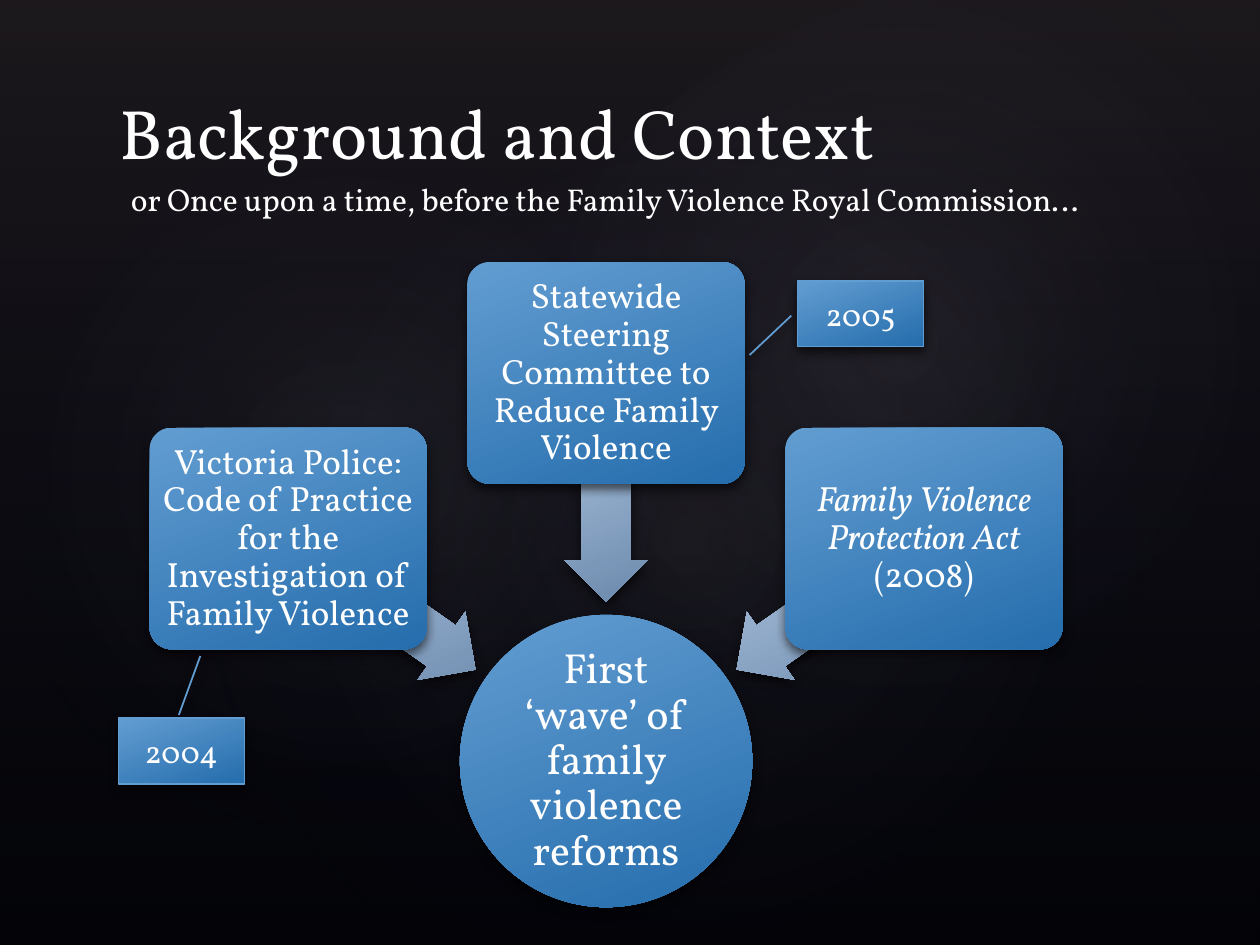
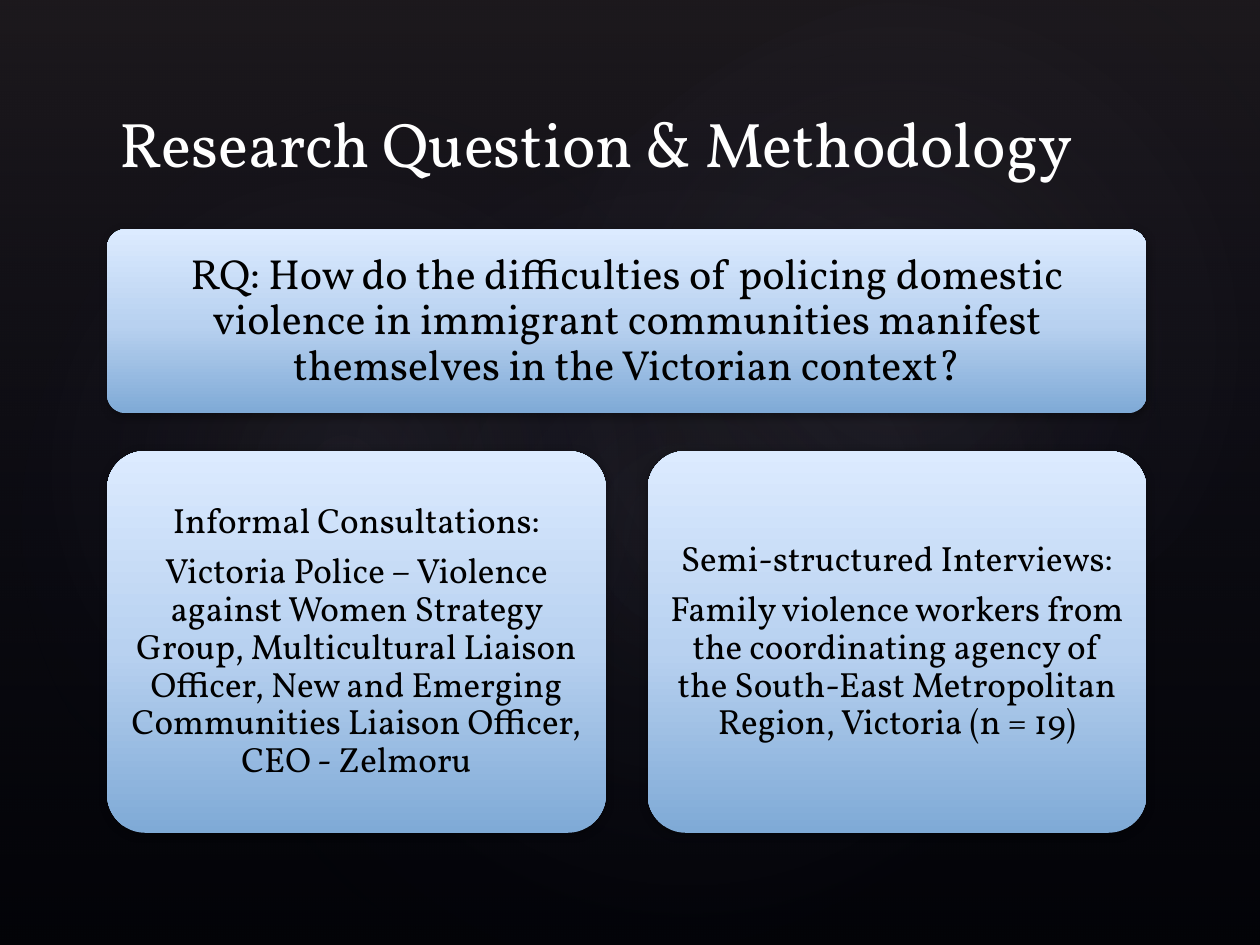
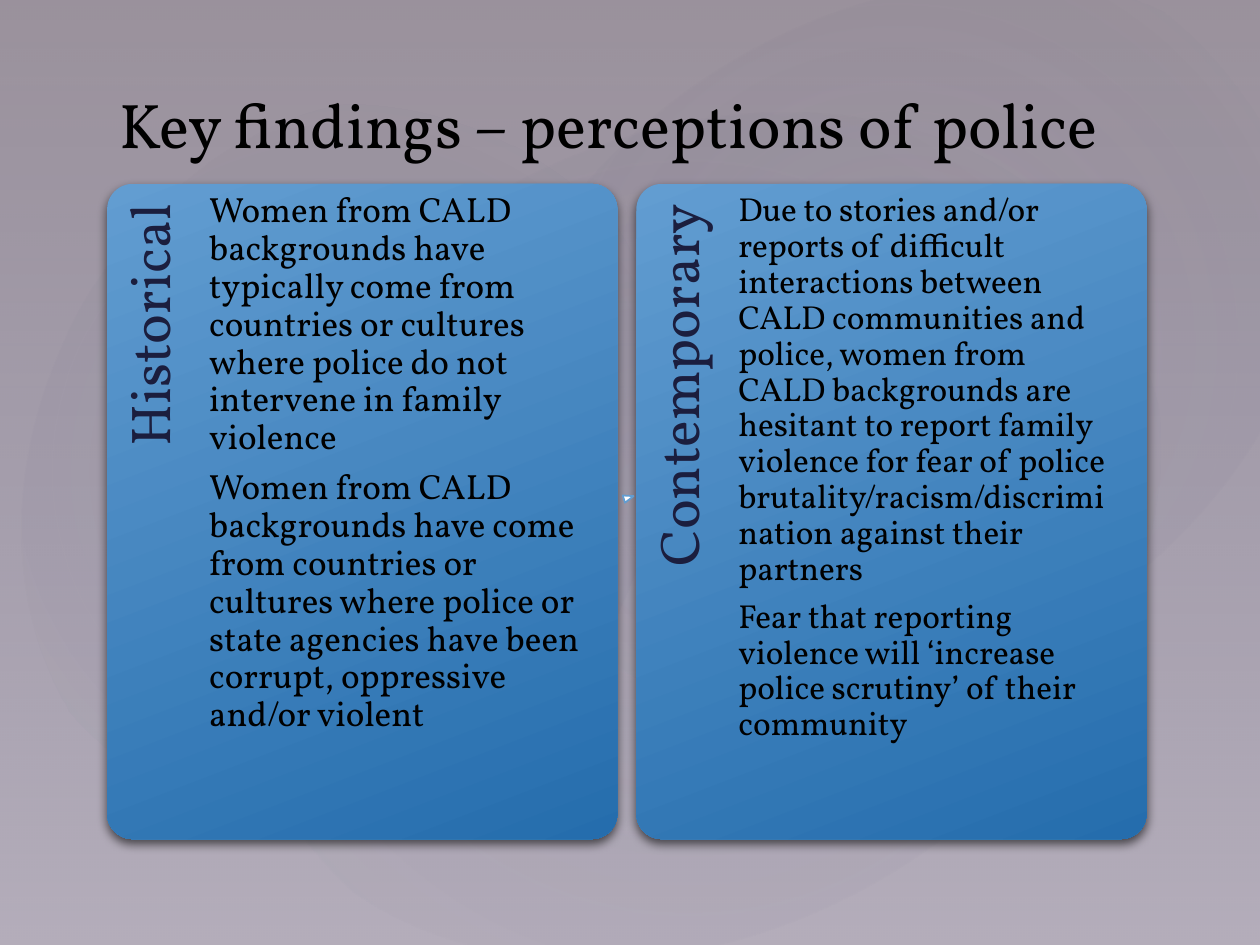
from collections import namedtuple
from math import cos, radians, sin

from pptx import Presentation
from pptx.dml.color import RGBColor
from pptx.enum.shapes import MSO_SHAPE as SHAPE
from pptx.enum.text import MSO_ANCHOR as ANCHOR, PP_ALIGN as ALIGN
from pptx.oxml import parse_xml
from pptx.oxml.ns import nsdecls, qn
from pptx.util import Inches, Pt

FONT = "Vollkorn"
BLACK = RGBColor(0x00, 0x00, 0x00)
WHITE = RGBColor(0xFF, 0xFF, 0xFF)
MAUVE = RGBColor(0xC4, 0xBC, 0xC6)
TAUPE = RGBColor(0x50, 0x46, 0x52)
NAVY = RGBColor(0x24, 0x28, 0x52)
INK = RGBColor(0x1B, 0x1E, 0x3E)
BLUE = RGBColor(0x62, 0x9D, 0xD1)
DEEP_BLUE = RGBColor(0x25, 0x6D, 0xAD)
ARROW_LIGHT = RGBColor(0xB7, 0xCC, 0xE5)
ARROW_DARK = RGBColor(0x6C, 0x8A, 0xAD)
PALE_LOW = RGBColor(0x7F, 0xAA, 0xD6)
PALE_MID = RGBColor(0xB8, 0xD1, 0xF0)
PALE_HIGH = RGBColor(0xDC, 0xEB, 0xFF)

Box = namedtuple("Box", "left top width height")

# Gradients: (position %, colour, opacity %) stops and an angle; None is radial
BLUE_FILL = ([(0, BLUE, 100), (100, DEEP_BLUE, 100)], 69)
ARROW_STOPS = [(0, ARROW_LIGHT, 100), (100, ARROW_DARK, 100)]
PALE_FILL = ([(0, PALE_LOW, 100), (48, PALE_MID, 100), (100, PALE_HIGH, 100)], 270)
VEIL_FILL = ([(0, TAUPE, 36), (100, NAVY, 10)], 90)

# Shadows: opacity %, blur and distance in points
STRONG_SHADOW = (60, 6, 3)
SOFT_SHADOW = (32, 5, 1)

# Background glows: box, rotation, opacity at the centre
GLOWS = [
    (Box(1.5, 1.14, 7.92, 6.24), 328.7, 7),
    (Box(-0.3, 1.28, 6.06, 4.9), 294.3, 8),
    (Box(3.58, 0.13, 7.09, 5.2), 328.7, 8),
]


def centred(x, y, width, height):
    return Box(x - width / 2, y - height / 2, width, height)


def set_gradient(shape, stops, angle):
    shape.fill.gradient()
    gradient = shape._element.spPr.find(qn("a:gradFill"))
    for child in list(gradient):
        gradient.remove(child)
    stop_xml = "".join(
        f'<a:gs pos="{position * 1000}"><a:srgbClr val="{color}">'
        f'<a:alpha val="{opacity * 1000}"/></a:srgbClr></a:gs>'
        for position, color, opacity in stops)
    gradient.append(parse_xml(f'<a:gsLst {nsdecls("a")}>{stop_xml}</a:gsLst>'))
    if angle is None:
        direction = (f'<a:path {nsdecls("a")} path="circle">'
                     '<a:fillToRect l="50000" t="50000" r="50000" b="50000"/></a:path>')
    else:
        direction = f'<a:lin {nsdecls("a")} ang="{angle * 60000}" scaled="0"/>'
    gradient.append(parse_xml(direction))


def set_shadow(shape, opacity, blur, distance):
    effects = shape._element.spPr.find(qn("a:effectLst"))
    effects.append(parse_xml(
        f'<a:outerShdw {nsdecls("a")} blurRad="{Pt(blur)}" dist="{Pt(distance)}" '
        f'dir="5400000" rotWithShape="0"><a:srgbClr val="{BLACK}">'
        f'<a:alpha val="{opacity * 1000}"/></a:srgbClr></a:outerShdw>'))


def add_gradient_shape(slide, kind, box, fill, shadow=None, adjustments=(), rotation=0):
    shape = slide.shapes.add_shape(kind, *map(Inches, box))
    shape.rotation = rotation
    for index, value in enumerate(adjustments):
        shape.adjustments[index] = value
    set_gradient(shape, *fill)
    shape.line.fill.background()
    shape.shadow.inherit = False
    if shadow:
        set_shadow(shape, *shadow)
    return shape


def write(shape, paragraphs, size, color, align=ALIGN.LEFT, anchor=ANCHOR.TOP,
          insets=(0.1, 0.05, 0.1, 0.05), tight=True):
    """Each paragraph is a list of (text, italic) runs, or a plain string."""
    frame = shape.text_frame
    frame.word_wrap = True
    frame.vertical_anchor = anchor
    (frame.margin_left, frame.margin_top,
     frame.margin_right, frame.margin_bottom) = map(Inches, insets)
    for index, content in enumerate(paragraphs):
        paragraph = frame.add_paragraph() if index else frame.paragraphs[0]
        paragraph.alignment = align
        if tight:
            paragraph.line_spacing = 0.9
            paragraph.space_after = Pt(0.35 * size)
        runs = [(content, False)] if isinstance(content, str) else content
        for text, italic in runs:
            run = paragraph.add_run()
            run.text = text
            run.font.name = FONT
            run.font.size = Pt(size)
            run.font.italic = italic
            run.font.color.rgb = color


def add_text(slide, box, paragraphs, size, color, rotation=0, **options):
    text_box = slide.shapes.add_textbox(*map(Inches, box))
    text_box.rotation = rotation
    write(text_box, paragraphs, size, color, **options)


def add_panel(slide, box, paragraphs, size, color, fill, shadow, inset,
              kind=SHAPE.ROUNDED_RECTANGLE, adjustments=(0.1,)):
    panel = add_gradient_shape(slide, kind, box, fill, shadow, adjustments)
    write(panel, paragraphs, size, color, ALIGN.CENTER, ANCHOR.MIDDLE, (inset,) * 4)


def start_slide(presentation, background, title, title_box, title_size, title_color):
    slide = presentation.slides.add_slide(presentation.slide_layouts[6])
    slide.background.fill.solid()
    slide.background.fill.fore_color.rgb = background
    # Veil and glows
    add_gradient_shape(slide, SHAPE.RECTANGLE, Box(0, 0, 10, 7.5), VEIL_FILL)
    for box, rotation, opacity in GLOWS:
        fill = ([(0, MAUVE, opacity), (58, NAVY, 0)], None)
        add_gradient_shape(slide, SHAPE.OVAL, box, fill, rotation=rotation)
    # Title
    add_text(slide, title_box, [title], title_size, title_color,
             anchor=ANCHOR.BOTTOM, tight=False)
    return slide


def add_year_callout(slide, box, year, leader):
    callout = add_gradient_shape(slide, SHAPE.LINE_CALLOUT_1, box, BLUE_FILL,
                                 STRONG_SHADOW, leader)
    callout.line.color.rgb = BLUE
    callout.line.width = Pt(1)
    write(callout, [year], 18, WHITE, ALIGN.CENTER, ANCHOR.MIDDLE, tight=False)


def add_reform_wheel(slide, hub):
    """Sources sit on an arc around the hub, each with an arrow pointing to it."""
    center_x, center_y = hub.left + hub.width / 2, hub.top + hub.height / 2
    add_panel(slide, hub, ["First ‘wave’ of family violence reforms"], 24, WHITE,
              BLUE_FILL, STRONG_SHADOW, 0.02, SHAPE.OVAL, ())
    sources = [
        (215, "Victoria Police: Code of Practice for the Investigation of Family Violence"),
        (270, "Statewide Steering Committee to Reduce Family Violence"),
        (325, [("Family Violence Protection Act ", True), ("(2008)", False)]),
    ]
    for angle, content in sources:
        across, down = cos(radians(angle)), sin(radians(angle))
        arrow = centred(center_x + 2.17 * across, center_y + 2.17 * down, 1.81, 0.66)
        # The light falls from the same side whichever way an arrow turns
        arrow_fill = (ARROW_STOPS, (69 - angle) % 360)
        add_gradient_shape(slide, SHAPE.LEFT_ARROW, arrow, arrow_fill, STRONG_SHADOW,
                           (0.6, 0.5), angle)
        card = centred(center_x + 3.08 * across, center_y + 3.08 * down, 2.2, 1.76)
        add_panel(slide, card, [content], 20, WHITE, BLUE_FILL, STRONG_SHADOW, 0.04)


def build_background_slide(presentation):
    slide = start_slide(presentation, BLACK, "Background and Context",
                        Box(0.85, 0.43, 8.25, 1), 40, WHITE)
    add_reform_wheel(slide, Box(3.65, 4.88, 2.32, 2.32))
    add_year_callout(slide, Box(0.94, 5.7, 1, 0.52), "2004", (-0.05, 0.48, -0.95, 0.65))
    add_year_callout(slide, Box(6.33, 2.23, 1, 0.52), "2005", (0.53, -0.05, 1.13, -0.38))
    add_text(slide, Box(0.94, 1.38, 8.16, 0.4),
             ["or Once upon a time, before the Family Violence Royal Commission…"],
             18, WHITE, tight=False)


def add_methodology(slide, box):
    """The question spans the top; the methods share the row below."""
    question_height, method_height, method_width = 1.46, 3.03, 3.96
    add_panel(slide, box._replace(height=question_height),
              ["RQ: How do the difficulties of policing domestic violence in immigrant "
               "communities manifest themselves in the Victorian context?"],
              24, BLACK, PALE_FILL, SOFT_SHADOW, 0.1)
    methods = [
        ["Informal Consultations:",
         "Victoria Police – Violence against Women Strategy Group, Multicultural Liaison "
         "Officer, New and Emerging Communities Liaison Officer, CEO - Zelmoru"],
        ["Semi-structured Interviews:",
         "Family violence workers from the coordinating agency of the South-East "
         "Metropolitan Region, Victoria (n = 19)"],
    ]
    for index, paragraphs in enumerate(methods):
        left = box.left + index * (box.width - method_width)
        top = box.top + box.height - method_height
        add_panel(slide, Box(left, top, method_width, method_height), paragraphs,
                  20, BLACK, PALE_FILL, SOFT_SHADOW, 0.08)


def build_methodology_slide(presentation):
    slide = start_slide(presentation, BLACK, "Research Question & Methodology",
                        Box(0.85, 0.72, 8.25, 0.76), 36, WHITE)
    add_methodology(slide, Box(0.85, 1.82, 8.25, 4.79))


def add_finding(slide, box, label, paragraphs, size):
    add_gradient_shape(slide, SHAPE.ROUNDED_RECTANGLE, box, BLUE_FILL,
                       STRONG_SHADOW, (0.05,))
    # Label running up the left edge
    label_length, label_width = 4.27, 0.81
    label_box = centred(box.left + label_width / 2, box.top + label_length / 2,
                        label_length, label_width)
    add_text(slide, label_box, [label], 32, INK, rotation=270, align=ALIGN.RIGHT,
             insets=(0, 0.12, 0.16, 0))
    # Findings beside it
    add_text(slide, Box(box.left + label_width, box.top, 3.02, box.height),
             paragraphs, size, BLACK, insets=(0, 0.07, 0, 0))


def build_findings_slide(presentation):
    slide = start_slide(presentation, MAUVE, "Key findings – perceptions of police",
                        Box(0.85, 0.57, 8.25, 0.76), 36, BLACK)
    findings = [
        ("Historical", 20, [
            "Women from CALD backgrounds have typically come from countries or cultures "
            "where police do not intervene in family violence",
            "Women from CALD backgrounds have come from countries or cultures where police "
            "or state agencies have been corrupt, oppressive and/or violent"]),
        ("Contemporary", 19, [
            "Due to stories and/or reports of difficult interactions between CALD "
            "communities and police, women from CALD backgrounds are hesitant to report "
            "family violence for fear of police brutality/racism/discrimination against "
            "their partners",
            "Fear that reporting violence will ‘increase police scrutiny’ of their "
            "community"]),
    ]
    for index, (label, size, paragraphs) in enumerate(findings):
        add_finding(slide, Box(0.85 + index * 4.2, 1.46, 4.05, 5.2),
                    label, paragraphs, size)
    # Small pointer between the cards
    pointer = slide.shapes.add_shape(SHAPE.FLOWCHART_EXTRACT,
                                     *map(Inches, Box(4.96, 3.91, 0.06, 0.08)))
    pointer.rotation = 73
    pointer.fill.solid()
    pointer.fill.fore_color.rgb = WHITE
    pointer.line.color.rgb = BLUE
    pointer.line.width = Pt(1)
    pointer.shadow.inherit = False


def main():
    presentation = Presentation()
    presentation.slide_width = Inches(10)
    presentation.slide_height = Inches(7.5)
    build_background_slide(presentation)
    build_methodology_slide(presentation)
    build_findings_slide(presentation)
    presentation.save("out.pptx")


if __name__ == "__main__":
    main()
